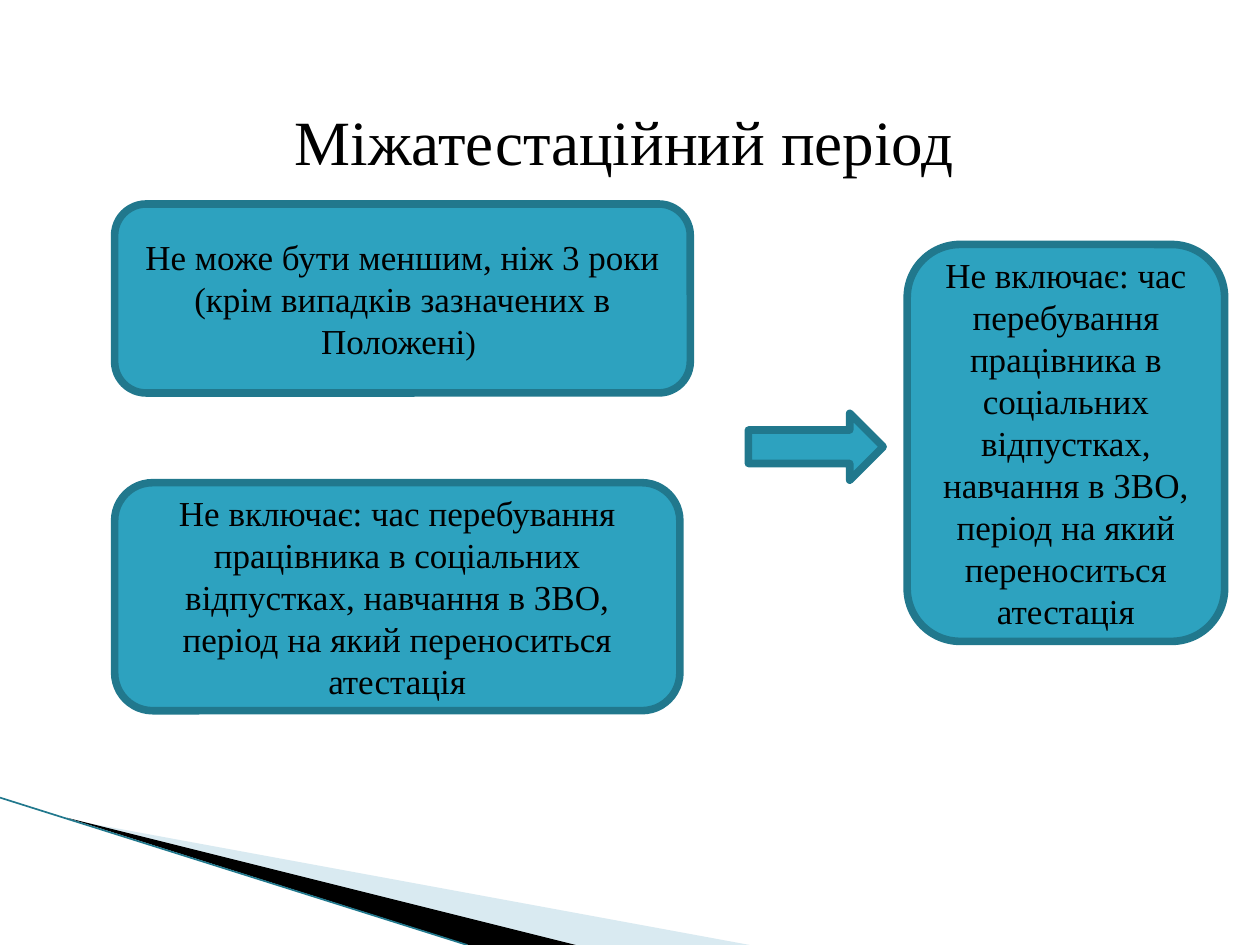
from lxml import etree
from pptx import Presentation
from pptx.dml.color import RGBColor
from pptx.enum.shapes import MSO_CONNECTOR, MSO_SHAPE
from pptx.enum.text import MSO_ANCHOR, PP_ALIGN
from pptx.oxml.ns import qn
from pptx.util import Pt

ROUNDED = MSO_SHAPE.ROUNDED_RECTANGLE
RIGHT_ARROW = MSO_SHAPE.RIGHT_ARROW
STRAIGHT = MSO_CONNECTOR.STRAIGHT
CENTER = PP_ALIGN.CENTER
MIDDLE = MSO_ANCHOR.MIDDLE
TOP = MSO_ANCHOR.TOP

TEAL = RGBColor(0x2D, 0xA2, 0xBF)
DARK_TEAL = RGBColor(0x21, 0x78, 0x8D)
PALE_BLUE = RGBColor(0xA0, 0xCB, 0xDC)
BLACK = RGBColor(0, 0, 0)
FONT = "Times New Roman"

TITLE = "Міжатестаційний період"
MINIMUM = "Не може бути меншим, ніж 3 роки (крім випадків зазначених в Положені"
EXCLUDED = (
    "Не включає: час перебування працівника в соціальних відпустках, "
    "навчання в ЗВО, період на який переноситься атестація"
)


def format_run(run, size):
    run.font.name = FONT
    run.font.size = Pt(size)
    run.font.color.rgb = BLACK


def add_wedge(slide, points, color, opacity=100):
    corners = [(Pt(x), Pt(y)) for x, y in points]
    builder = slide.shapes.build_freeform(*corners[0])
    builder.add_line_segments(corners[1:], close=True)
    wedge = builder.convert_to_shape()
    wedge.shadow.inherit = False
    wedge.fill.solid()
    wedge.fill.fore_color.rgb = color
    wedge.line.fill.background()
    if opacity < 100:
        fill_color = wedge._element.spPr.find(qn("a:solidFill"))[0]
        etree.SubElement(fill_color, qn("a:alpha"), val=str(opacity * 1000))


def add_edge(slide, start, end):
    edge = slide.shapes.add_connector(STRAIGHT, *map(Pt, start + end))
    edge.line.color.rgb = DARK_TEAL
    edge.line.width = Pt(0.95)
    etree.SubElement(edge._element.spPr, qn("a:effectLst"))


def add_block(slide, preset, left, top, width, height):
    block = slide.shapes.add_shape(preset, *map(Pt, (left, top, width, height)))
    block.shadow.inherit = False
    block.fill.solid()
    block.fill.fore_color.rgb = TEAL
    block.line.color.rgb = DARK_TEAL
    block.line.width = Pt(4.33)
    etree.SubElement(block.line._get_or_add_ln(), qn("a:round"))
    return block


def add_card(slide, bounds, *parts):
    frame = add_block(slide, ROUNDED, *bounds).text_frame
    frame.word_wrap = True
    frame.vertical_anchor = MIDDLE
    paragraph = frame.paragraphs[0]
    paragraph.alignment = CENTER
    for text, size in parts:
        run = paragraph.add_run()
        run.text = text
        format_run(run, size)


def set_title(slide):
    title = slide.shapes.title
    title.left, title.top, title.width, title.height = map(Pt, (70.6, 54.7, 572.4, 52))
    frame = title.text_frame
    frame.text = TITLE
    frame.vertical_anchor = TOP
    frame.paragraphs[0].alignment = CENTER
    format_run(frame.paragraphs[0].runs[0], 36)


def main():
    deck = Presentation()
    deck.slide_width, deck.slide_height = Pt(720), Pt(540)
    slide = deck.slides.add_slide(deck.slide_layouts[5])

    add_wedge(slide, [(39.6, 468.4), (428.4, 540), (328.3, 540)], PALE_BLUE, 40)
    add_wedge(slide, [(38.2, 467.3), (329, 540), (267.8, 540)], BLACK)
    add_edge(slide, (0, 455.8), (267, 540))

    set_title(slide)
    add_card(slide, (65.5, 116.6, 329, 108), (MINIMUM, 20), (") ", 18))
    add_card(slide, (65.5, 275.8, 323, 130.3), (EXCLUDED, 20))
    add_block(slide, RIGHT_ARROW, 427.7, 236.2, 77, 38.2)
    add_card(slide, (518.4, 139.7, 181.4, 226.8), (EXCLUDED, 20))

    deck.save("out.pptx")


if __name__ == "__main__":
    main()
